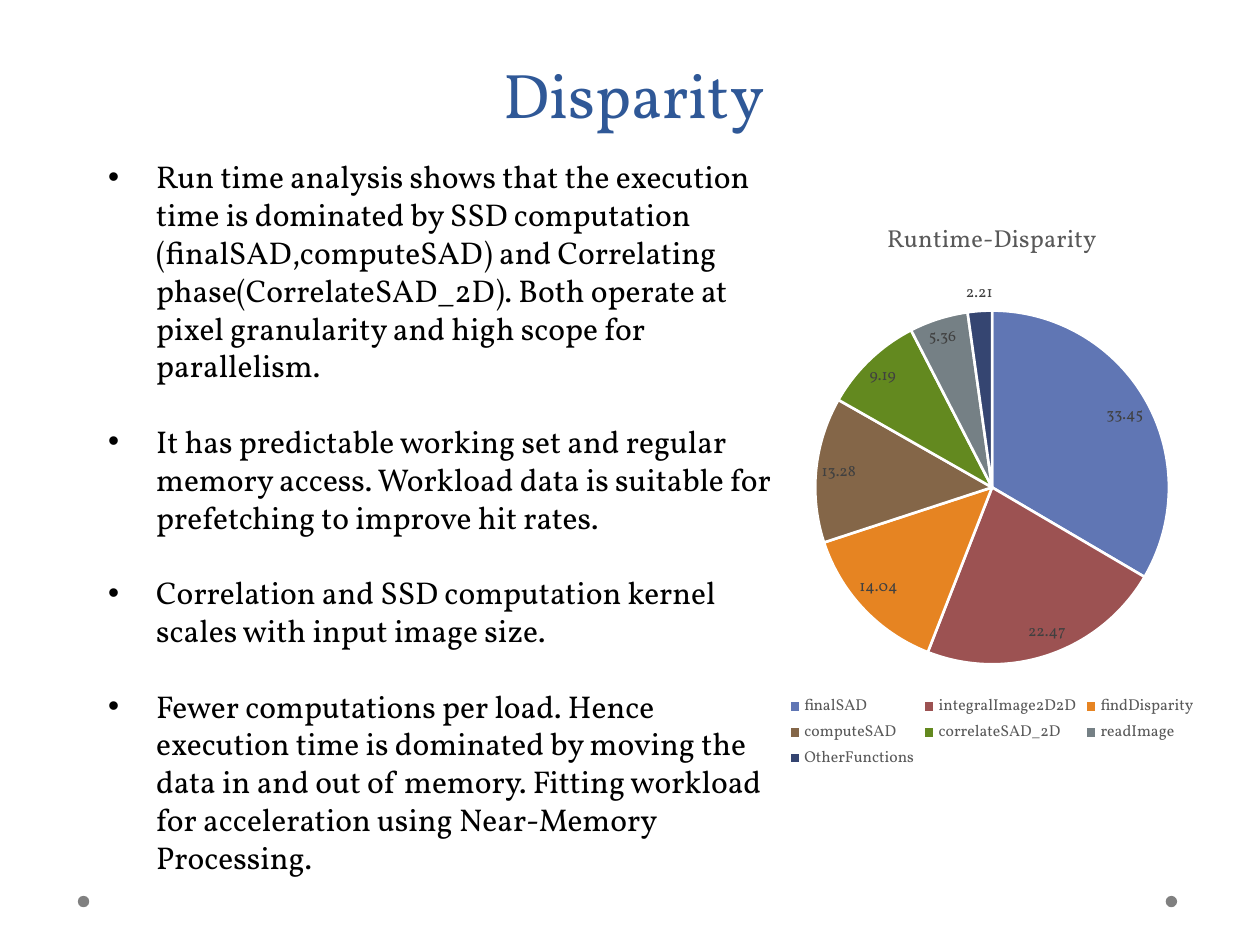
from dataclasses import dataclass

from pptx import Presentation
from pptx.chart.data import CategoryChartData as ChartData
from pptx.dml.color import RGBColor as Color
from pptx.enum.chart import XL_CHART_TYPE as ChartType
from pptx.enum.chart import XL_LABEL_POSITION as LabelPosition
from pptx.enum.chart import XL_LEGEND_POSITION as LegendPosition
from pptx.enum.shapes import MSO_SHAPE as Shape
from pptx.enum.text import PP_ALIGN as Align
from pptx.oxml.ns import qn
from pptx.util import Cm, Pt


@dataclass(frozen=True)
class Theme:
    font: str = "Vollkorn"
    heading: str = "2F5897"
    body: str = "000000"
    muted: str = "595959"
    label: str = "404040"
    dot: str = "808080"
    edge: str = "FFFFFF"
    slices: tuple = ("6076B4", "9C5252", "E68422", "846648",
                     "63891F", "758085", "354571")
    heading_size: int = 36
    body_size: int = 18
    chart_title_size: int = 14
    chart_size: int = 10
    small_size: int = 9


theme = Theme()


def style(font, size, color):
    font.name = theme.font
    font.size = Pt(size)
    font.bold = False
    font.color.rgb = Color.from_string(color)


def write(text, frame, size, color, align=Align.LEFT, bullet=False, gap=0):
    para = frame.paragraphs[0]
    if para.runs:
        para = frame.add_paragraph()
    para.alignment = align
    para.space_before = Pt(gap)
    span = para.add_run()
    span.text = text
    style(span.font, size, color)
    if bullet:
        properties = para._p.get_or_add_pPr()
        properties.set("marL", str(Cm(2.24)))
        properties.set("indent", str(-Cm(0.97)))
        marker_font = properties.makeelement(qn("a:buFont"), {"typeface": "Arial"})
        marker = properties.makeelement(qn("a:buChar"), {"char": "•"})
        properties.extend([marker_font, marker])


deck = Presentation()
deck.slide_width, deck.slide_height = Cm(25.4), Cm(19.05)
page = deck.slides.add_slide(deck.slide_layouts[6])

for left in (23.5, 1.57):
    dot = page.shapes.add_shape(Shape.OVAL, Cm(left), Cm(18.06), Cm(0.23), Cm(0.23))
    dot.shadow.inherit = False
    dot.fill.solid()
    dot.fill.fore_color.rgb = Color.from_string(theme.dot)
    dot.line.fill.background()

findings = (
    "Run time analysis shows that the execution time is dominated by SSD "
    "computation (finalSAD,computeSAD) and Correlating "
    "phase(CorrelateSAD_2D). Both operate at pixel granularity and high "
    "scope for parallelism.",
    "It has predictable working set and regular memory access. Workload data "
    "is suitable for prefetching to improve hit rates.",
    "Correlation and SSD computation kernel scales with input image size.",
    "Fewer computations per load. Hence execution time is dominated by moving "
    "the data in and out of memory. Fitting workload for acceleration using "
    "Near-Memory Processing.",
)
body_box = page.shapes.add_textbox(Cm(0.66), Cm(3.05), Cm(15.24), Cm(15))
body_box.text_frame.word_wrap = True
for number, finding in enumerate(findings):
    write(finding, body_box.text_frame, theme.body_size, theme.body,
          bullet=True, gap=21.6 if number else 0)

runtimes = {
    "finalSAD": 33.45,
    "integralImage2D2D": 22.47,
    "findDisparity": 14.04,
    "computeSAD": 13.28,
    "correlateSAD_2D": 9.19,
    "readImage": 5.36,
    "OtherFunctions": 2.21,
}
data = ChartData()
data.categories = list(runtimes)
data.add_series("Series 1", list(runtimes.values()))
chart = page.shapes.add_chart(ChartType.PIE, Cm(14.83), Cm(3.99),
                              Cm(10.34), Cm(11.61), data).chart
style(chart.font, theme.chart_size, theme.body)
chart.has_title = True
write("Runtime-Disparity", chart.chart_title.text_frame,
      theme.chart_title_size, theme.muted, align=Align.CENTER)
chart.chart_title.include_in_layout = False

chart.has_legend = True
chart.legend.position = LegendPosition.BOTTOM
chart.legend.include_in_layout = False
style(chart.legend.font, theme.small_size, theme.muted)

pie = chart.plots[0]
pie.vary_by_categories = True
pie.has_data_labels = True
pie.data_labels.show_value = True
pie.data_labels.show_percentage = False
pie.data_labels.position = LabelPosition.BEST_FIT
style(pie.data_labels.font, theme.small_size, theme.label)
for index, color in enumerate(theme.slices):
    piece = pie.series[0].points[index].format
    piece.fill.solid()
    piece.fill.fore_color.rgb = Color.from_string(color)
    piece.line.color.rgb = Color.from_string(theme.edge)
    piece.line.width = Pt(1.5)

title_box = page.shapes.add_textbox(Cm(0.43), Cm(0.99), Cm(24.69), Cm(1.78))
title_box.text_frame.word_wrap = True
write("Disparity", title_box.text_frame, theme.heading_size, theme.heading,
      align=Align.CENTER)

deck.save("out.pptx")
